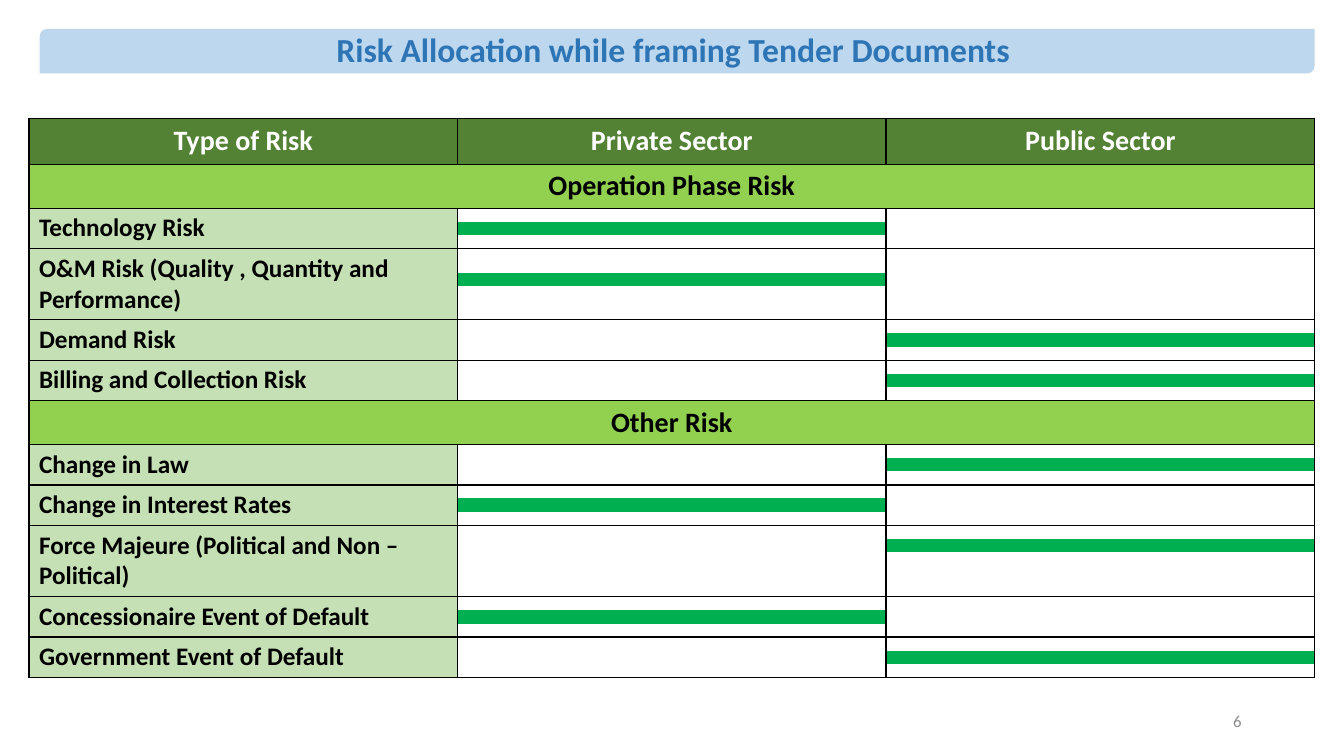
from lxml.etree import SubElement
from pptx import Presentation
from pptx.dml.color import RGBColor
from pptx.enum.shapes import MSO_SHAPE as Preset
from pptx.enum.text import MSO_ANCHOR as Anchor, PP_ALIGN as Align
from pptx.oxml.ns import qn
from pptx.util import Cm, Pt

BLACK = RGBColor(0x00, 0x00, 0x00)
WHITE = RGBColor(0xFF, 0xFF, 0xFF)
GRAY = RGBColor(0x8C, 0x8C, 0x8C)
BLUE = RGBColor(0x2E, 0x75, 0xB6)
PALE_BLUE = RGBColor(0xBD, 0xD7, 0xEE)
DARK_GREEN = RGBColor(0x54, 0x82, 0x35)
LIME = RGBColor(0x92, 0xD0, 0x50)
PALE_GREEN = RGBColor(0xC5, 0xE0, 0xB4)
BAR_GREEN = RGBColor(0x00, 0xB0, 0x50)

PLAIN_TABLE_STYLE = "{2D5ABB26-0587-4C30-8999-92F81FD0307C}"
HEADER_HEIGHT, SECTION_HEIGHT = 1.16, 1.1
PRIVATE, PUBLIC = 1, 2
ONE_LINE = (0.34, 0.34, 0.34)  # space above the bar, bar, space below
HEADINGS = ["Type of Risk", "Private Sector", "Public Sector"]
SECTIONS = {
    "Operation Phase Risk": [
        ("Technology Risk", PRIVATE, ONE_LINE),
        ("O&M Risk (Quality , Quantity and Performance)", PRIVATE, (0.61, 0.34, 0.82)),
        ("Demand Risk", PUBLIC, ONE_LINE),
        ("Billing and Collection Risk", PUBLIC, ONE_LINE),
    ],
    "Other Risk": [
        ("Change in Law", PUBLIC, ONE_LINE),
        ("Change in Interest Rates", PRIVATE, ONE_LINE),
        ("Force Majeure (Political and Non –Political)", PUBLIC, (0.34, 0.34, 1.09)),
        ("Concessionaire Event of Default", PRIVATE, ONE_LINE),
        ("Government Event of Default", PUBLIC, ONE_LINE),
    ],
}


def write(frame, text, size=18, color=BLACK, bold=True, align=Align.LEFT, spacing=None):
    """Write one formatted paragraph into a text frame."""
    frame.word_wrap = True
    paragraph = frame.paragraphs[0]
    paragraph.alignment = align
    paragraph.line_spacing = spacing
    run = paragraph.add_run()
    run.text = text
    run.font.name = "Calibri"
    run.font.size = Pt(size)
    run.font.bold = bold
    run.font.color.rgb = color


class RiskSlide:
    def __init__(self, presentation):
        self.slide = presentation.slides.add_slide(presentation.slide_layouts[6])

    def banner(self, text, left, top, width, height):
        shape = self.slide.shapes.add_shape(
            Preset.ROUND_2_DIAG_RECTANGLE, Cm(left), Cm(top), Cm(width), Cm(height))
        shape.shadow.inherit = False
        shape.fill.solid()
        shape.fill.fore_color.rgb = PALE_BLUE
        shape.line.fill.background()
        shape.text_frame.vertical_anchor = Anchor.MIDDLE
        write(shape.text_frame, text, size=24, color=BLUE, align=Align.CENTER, spacing=0.9)

    def page_number(self, text, left, top, width, height):
        box = self.slide.shapes.add_textbox(Cm(left), Cm(top), Cm(width), Cm(height))
        box.text_frame.vertical_anchor = Anchor.MIDDLE
        write(box.text_frame, text, size=12, color=GRAY, bold=False, align=Align.RIGHT)

    def border(self, cell, sides):
        properties = cell._tc.get_or_add_tcPr()
        for side in "LRTB":
            line = SubElement(properties, qn(f"a:ln{side}"), w=str(Pt(1)))
            if side in sides:
                fill = SubElement(line, qn("a:solidFill"))
                SubElement(fill, qn("a:srgbClr"), val=str(BLACK))
            else:
                SubElement(line, qn("a:noFill"))

    def cell(self, cell, fill=None, sides="LRTB", text=None, **style):
        self.border(cell, sides)
        if fill is None:
            cell.fill.background()
        else:
            cell.fill.solid()
            cell.fill.fore_color.rgb = fill
        if text is not None:
            cell.margin_top = cell.margin_bottom = Cm(0.12)
            write(cell.text_frame, text, **style)
        else:
            # Tiny empty text lets the thin rows keep their height
            cell.margin_top = cell.margin_bottom = 0
            SubElement(cell.text_frame.paragraphs[0]._p, qn("a:endParaRPr"), sz="400")

    def heading(self, cell, text, fill, color):
        cell.vertical_anchor = Anchor.MIDDLE
        self.cell(cell, fill, text=text, size=20, color=color, align=Align.CENTER)

    def risk(self, table, first, label, bearer):
        """Fill three rows: a merged label and a bar under the bearer."""
        table.cell(first, 0).merge(table.cell(first + 2, 0))
        for step, sides in enumerate(("LRT", "LR", "LRB")):
            self.cell(table.cell(first + step, 0), PALE_GREEN,
                      text=label if step == 0 else None)
            for column in (PRIVATE, PUBLIC):
                has_bar = step == 1 and column == bearer
                self.cell(table.cell(first + step, column),
                          BAR_GREEN if has_bar else None, sides)

    def risk_table(self, left, top, column_width):
        heights = [HEADER_HEIGHT]
        for risks in SECTIONS.values():
            heights.append(SECTION_HEIGHT)
            for _, _, parts in risks:
                heights.extend(parts)
        frame = self.slide.shapes.add_table(
            len(heights), len(HEADINGS), Cm(left), Cm(top),
            Cm(column_width * len(HEADINGS)), Cm(sum(heights)))
        table = frame.table
        table.first_row = table.horz_banding = False
        table._tbl.tblPr.find(qn("a:tableStyleId")).text = PLAIN_TABLE_STYLE
        for column in table.columns:
            column.width = Cm(column_width)
        for row, height in zip(table.rows, heights):
            row.height = Cm(height)

        # Header row
        for column, text in enumerate(HEADINGS):
            self.heading(table.cell(0, column), text, DARK_GREEN, WHITE)

        # Sections with their risks
        row = 1
        for section, risks in SECTIONS.items():
            table.cell(row, 0).merge(table.cell(row, 2))
            self.heading(table.cell(row, 0), section, LIME, BLACK)
            for column in (PRIVATE, PUBLIC):
                self.cell(table.cell(row, column), LIME)
            row += 1
            for label, bearer, parts in risks:
                self.risk(table, row, label, bearer)
                row += len(parts)


def main():
    presentation = Presentation()
    presentation.slide_width = Cm(33.87)
    presentation.slide_height = Cm(19.05)
    page = RiskSlide(presentation)
    page.risk_table(0.73, 2.98, 10.8)
    page.banner("Risk Allocation while framing Tender Documents ", 1, 0.73, 32.13, 1.12)
    page.page_number("6", 23.92, 17.66, 7.62, 1.01)
    presentation.save("out.pptx")


if __name__ == "__main__":
    main()
